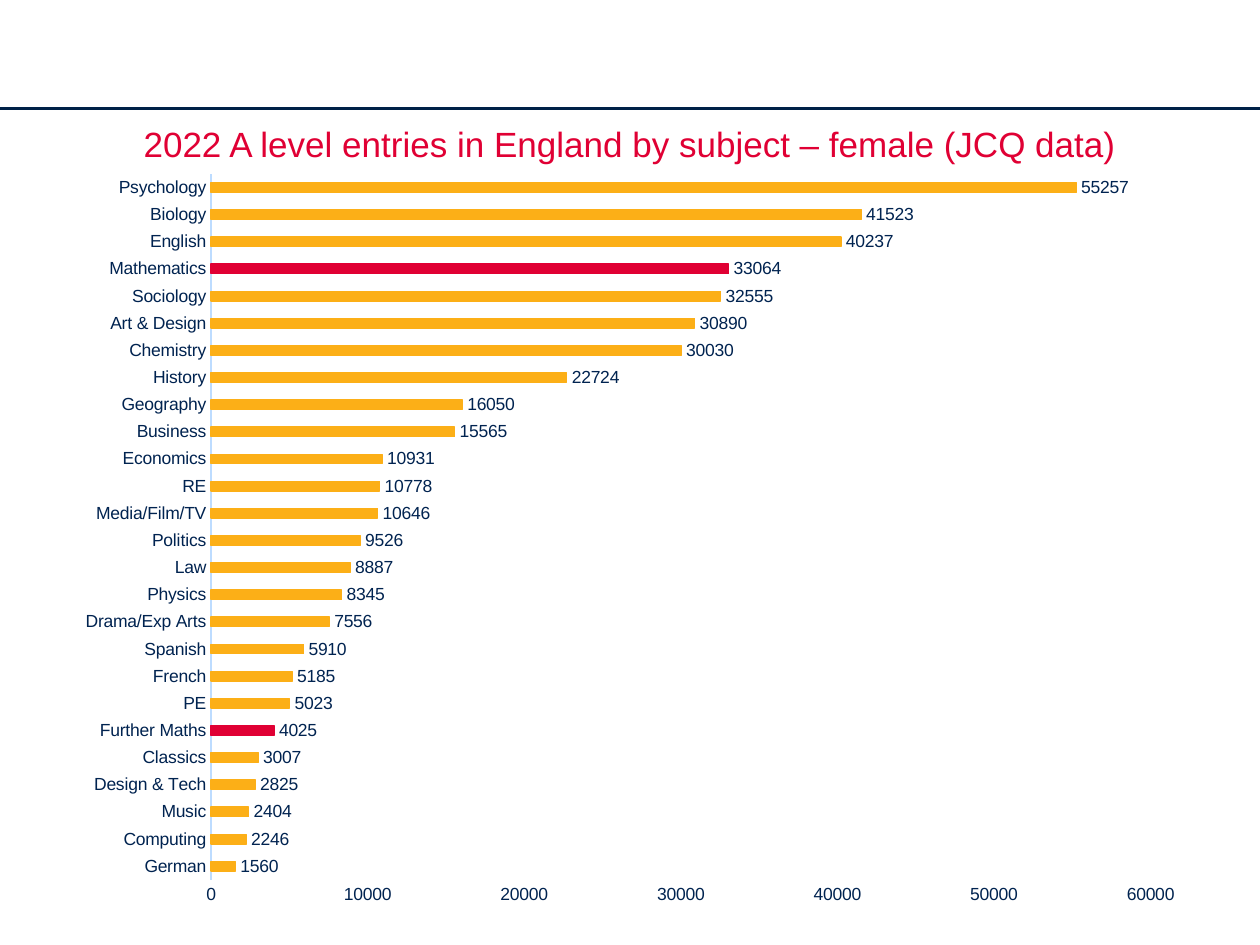
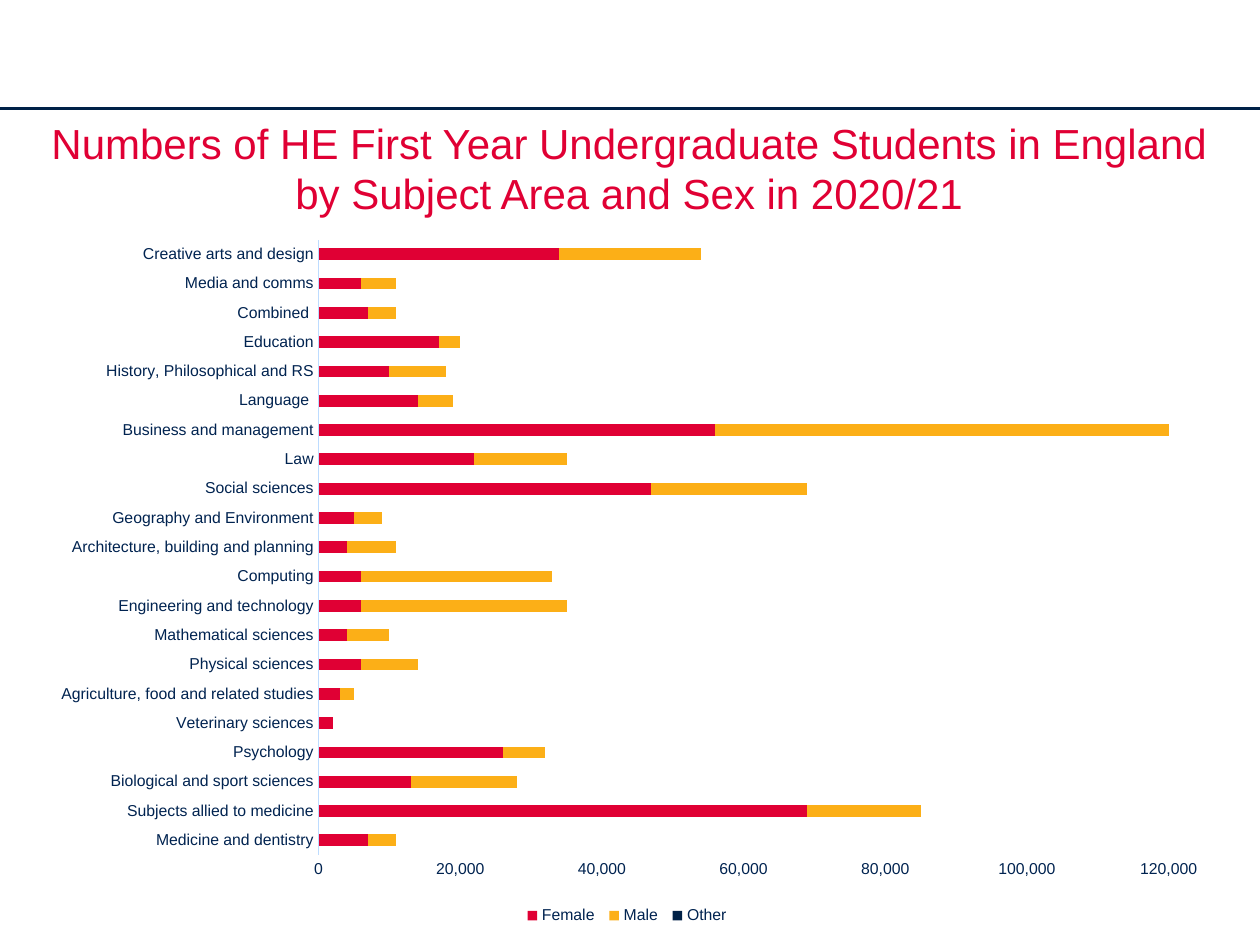
from pptx import Presentation
from pptx import util as u
from pptx.chart import data as cd
from pptx.dml import color as dc
from pptx.enum import chart as ch, shapes, text
from lxml import etree

COLORS = {
    "navy": "002147",
    "label": "002350",
    "red": "E00034",
    "amber": "FCAF17",
    "axis": "BDDCFF",
}
FONT = "Arial"
A_NS = "http://schemas.openxmlformats.org/drawingml/2006/main"

ENTRIES = [
    ("German", 1560), ("Computing", 2246), ("Music", 2404),
    ("Design & Tech", 2825), ("Classics", 3007), ("Further Maths", 4025),
    ("PE", 5023), ("French", 5185), ("Spanish", 5910),
    ("Drama/Exp Arts", 7556), ("Physics", 8345), ("Law", 8887),
    ("Politics", 9526), ("Media/Film/TV", 10646), ("RE", 10778),
    ("Economics", 10931), ("Business", 15565), ("Geography", 16050),
    ("History", 22724), ("Chemistry", 30030), ("Art & Design", 30890),
    ("Sociology", 32555), ("Mathematics", 33064), ("English", 40237),
    ("Biology", 41523), ("Psychology", 55257),
]
MATHS_SUBJECTS = ("Mathematics", "Further Maths")

STUDENTS = [
    ("Medicine and dentistry", 7000, 4000, 0),
    ("Subjects allied to medicine", 69000, 16000, 0),
    ("Biological and sport sciences", 13000, 15000, 0),
    ("Psychology", 26000, 6000, 0),
    ("Veterinary sciences", 2000, 0, 0),
    ("Agriculture, food and related studies", 3000, 2000, 0),
    ("Physical sciences", 6000, 8000, 0),
    ("Mathematical sciences", 4000, 6000, 0),
    ("Engineering and technology", 6000, 29000, 0),
    ("Computing", 6000, 27000, 0),
    ("Architecture, building and planning", 4000, 7000, 0),
    ("Geography and Environment", 5000, 4000, 0),
    ("Social sciences", 47000, 22000, 0),
    ("Law", 22000, 13000, 0),
    ("Business and management", 56000, 66000, 0),
    ("Language ", 14000, 5000, 0),
    ("History, Philosophical and RS", 10000, 8000, 0),
    ("Education", 17000, 3000, 0),
    ("Combined ", 7000, 4000, 0),
    ("Media and comms", 6000, 5000, 0),
    ("Creative arts and design", 34000, 20000, 0),
]
SEXES = [("Female ", "red"), ("Male ", "amber"), ("Other ", "navy")]


def rgb(name):
    return dc.RGBColor.from_string(COLORS[name])


def style_font(font, size, color):
    font.name = FONT
    font.size = u.Pt(size)
    font.color.rgb = rgb(color)


def paint(fmt, color, outline=False):
    fmt.fill.solid()
    fmt.fill.fore_color.rgb = rgb(color)
    if outline:
        fmt.line.color.rgb = rgb(color)
        fmt.line.width = u.Pt(0.75)


def new_slide(prs):
    s = prs.slides.add_slide(prs.slide_layouts[6])
    y = u.Pt(62)
    rule = s.shapes.add_connector(shapes.MSO_CONNECTOR.STRAIGHT, 0, y, prs.slide_width, y)
    rule.line.color.rgb = rgb("navy")
    rule.line.width = u.Pt(2.25)
    etree.SubElement(rule.element.spPr, f"{{{A_NS}}}effectLst")
    return s


def add_title(s, box, lines, size):
    sp = s.shapes.add_textbox(*map(u.Pt, box))
    tf = sp.text_frame
    tf.word_wrap = True
    tf.auto_size = text.MSO_AUTO_SIZE.SHAPE_TO_FIT_TEXT
    for i, line in enumerate(lines):
        p = tf.add_paragraph() if i else tf.paragraphs[0]
        p.alignment = text.PP_ALIGN.CENTER
        r = p.add_run()
        r.text = line
        style_font(r.font, size, "red")


def add_bar_chart(s, box, kind, categories, series, size, gap, number_format="General"):
    data = cd.CategoryChartData(number_format=number_format)
    data.categories = categories
    for name, values in series:
        data.add_series(name, values)
    chart = s.shapes.add_chart(kind, *map(u.Pt, box), data).chart
    chart.has_title = False
    chart.has_legend = False
    style_font(chart.font, 10, "navy")
    for axis in (chart.category_axis, chart.value_axis):
        axis.has_major_gridlines = False
        axis.major_tick_mark = axis.minor_tick_mark = ch.XL_TICK_MARK.NONE
        style_font(axis.tick_labels.font, size, "label")
    line = chart.category_axis.format.line
    line.color.rgb = rgb("axis")
    line.width = u.Pt(0.75)
    chart.value_axis.format.line.fill.background()
    labels = chart.value_axis.tick_labels
    labels.number_format = number_format
    labels.number_format_is_linked = False
    plot = chart.plots[0]
    plot.gap_width = gap
    plot.vary_by_categories = False
    return chart


def entries_slide(prs, box):
    x, y, w, h = box
    s = new_slide(prs)
    title = "2022 A level entries in England by subject – female (JCQ data)"
    add_title(s, (x, y, w, 31.7), [title], 20)
    subjects, counts = zip(*ENTRIES)
    chart = add_bar_chart(s, (x, y + 24.5, w, h - 24.5), ch.XL_CHART_TYPE.BAR_CLUSTERED,
                          subjects, [("Series 1", counts)], 10, 182)
    bars = chart.plots[0].series[0]
    paint(bars.format, "amber", outline=True)
    for subject in MATHS_SUBJECTS:
        paint(bars.points[subjects.index(subject)].format, "red", outline=True)
    labels = bars.data_labels
    labels.show_value = True
    labels.position = ch.XL_LABEL_POSITION.OUTSIDE_END
    style_font(labels.font, 10, "label")


def students_slide(prs, box):
    x, y, w, h = box
    s = new_slide(prs)
    subjects, *counts = zip(*STUDENTS)
    series = [(name, values) for (name, _), values in zip(SEXES, counts)]
    chart = add_bar_chart(s, (x, y + 65.5, w, h - 65.5), ch.XL_CHART_TYPE.BAR_STACKED,
                          subjects, series, 9, 150, "#,##0")
    chart.plots[0].overlap = 100
    chart.value_axis.minimum_scale = 0
    chart.value_axis.maximum_scale = 120000
    for bars, (_, color) in zip(chart.plots[0].series, SEXES):
        paint(bars.format, color)
    chart.has_legend = True
    chart.legend.position = ch.XL_LEGEND_POSITION.BOTTOM
    chart.legend.include_in_layout = False
    style_font(chart.legend.font, 9, "label")
    add_title(s, (x, y, w, 65.5),
              ["Numbers of HE First Year Undergraduate Students in England",
               "by Subject Area and Sex in 2020/21"], 24)


def main():
    prs = Presentation()
    prs.slide_width, prs.slide_height = u.Pt(720), u.Pt(540)
    entries_slide(prs, (36, 66.2, 648, 459.4))
    students_slide(prs, (21.6, 63.4, 676, 468))
    prs.save("out.pptx")


if __name__ == "__main__":
    main()
